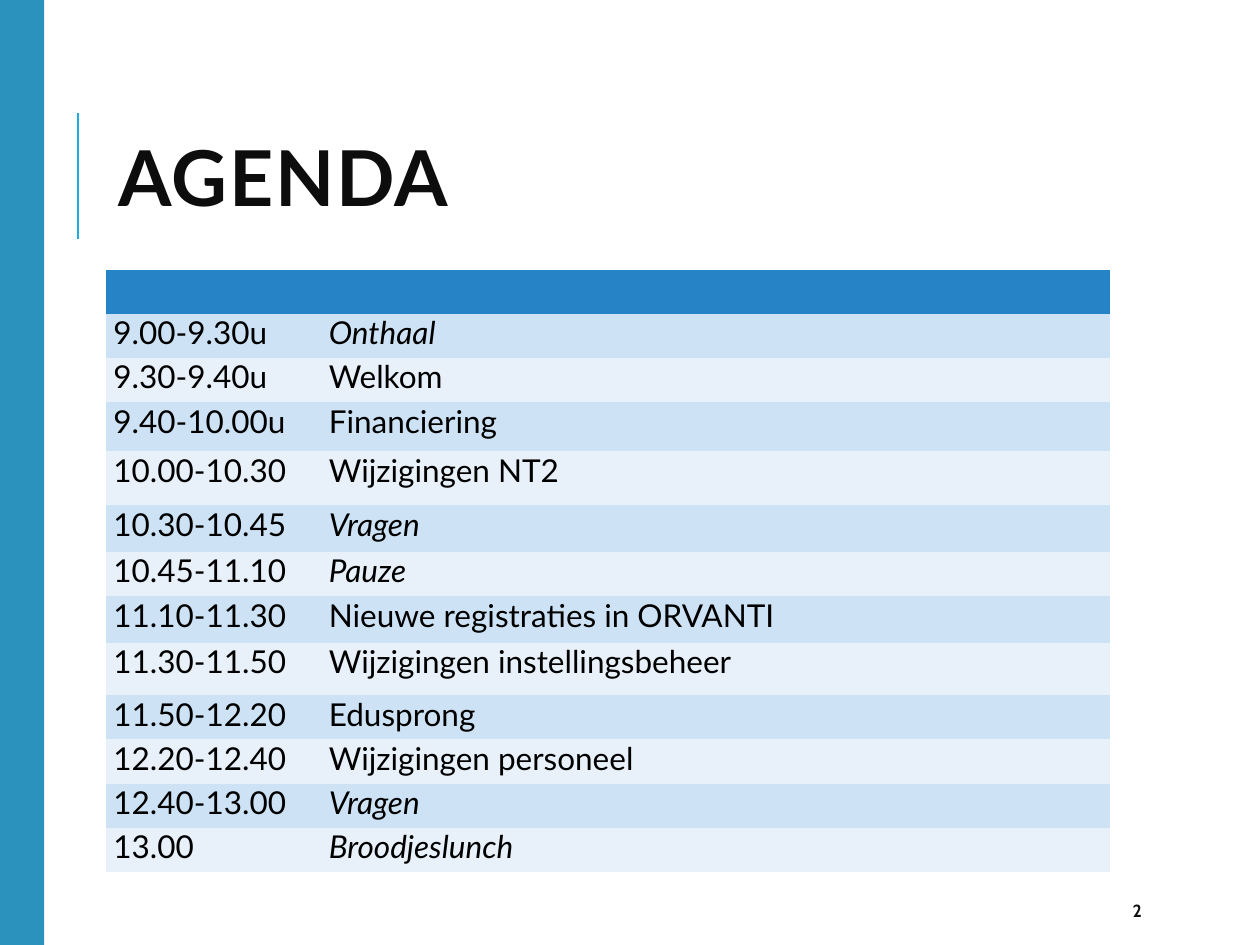
"""Build the agenda slide with its timetable."""
from pptx import Presentation
from pptx.dml.color import RGBColor
from pptx.enum.shapes import MSO_CONNECTOR as Link, MSO_SHAPE as Shape
from pptx.enum.text import MSO_ANCHOR as Anchor
from pptx.oxml.ns import qn
from pptx.util import Inches, Pt

BLACK = RGBColor(0x00, 0x00, 0x00)
INK = RGBColor(0x0D, 0x0D, 0x0D)
TEAL = RGBColor(0x2B, 0x92, 0xBE)
CYAN = RGBColor(0x1C, 0xAD, 0xE4)
HEAD = RGBColor(0x26, 0x83, 0xC6)
BANDS = RGBColor(0xCD, 0xE3, 0xF5), RGBColor(0xE8, 0xF1, 0xFA)
PLAIN = "{2D5ABB26-0587-4C30-8999-92F81FD0307C}"

AGENDA = [
    ("9.00-9.30u", "Onthaal", True),
    ("9.30-9.40u", "Welkom", False),
    ("9.40-10.00u", "Financiering", False),
    ("10.00-10.30", "Wijzigingen NT2", False),
    ("10.30-10.45", "Vragen", True),
    ("10.45-11.10", "Pauze", True),
    ("11.10-11.30", "Nieuwe registraties in ORVANTI", False),
    ("11.30-11.50", "Wijzigingen instellingsbeheer", False),
    ("11.50-12.20", "Edusprong", False),
    ("12.20-12.40", "Wijzigingen personeel", False),
    ("12.40-13.00", "Vragen", True),
    ("13.00", "Broodjeslunch", True),
]
WIDTHS = 1.71, 6.26
ROW = 0.35
TALL = {3: 0.39, 4: 0.43, 5: 0.37, 7: 0.37, 8: 0.42}


def write(frame, text, font="Lato", size=18, color=BLACK, bold=False,
          italic=False, gap=0, lead=None):
    para = frame.paragraphs[0]
    para.line_spacing = lead
    run = para.add_run()
    run.text = text
    style = run.font
    style.name, style.size = font, Pt(size)
    style.bold, style.italic = bold, italic
    style.color.rgb = color
    if gap:
        run._r.get_or_add_rPr().set("spc", str(gap * 100))


class Deck:
    def __init__(self, show):
        self.ink = INK
        self.slide = show.slides.add_slide(show.slide_layouts[6])
        self.shapes = self.slide.shapes

    def bar(self, x, y, w, h, color):
        bar = self.shapes.add_shape(
            Shape.RECTANGLE, Inches(x), Inches(y), Inches(w), Inches(h))
        bar.shadow.inherit = False
        bar.fill.solid()
        bar.fill.fore_color.rgb = color
        bar.line.fill.background()

    def line(self, x1, y1, x2, y2, color, width):
        line = self.shapes.add_connector(
            Link.STRAIGHT, Inches(x1), Inches(y1), Inches(x2), Inches(y2))
        line.line.color.rgb = color
        line.line.width = Pt(width)
        props = line._element.spPr
        props.append(props.makeelement(qn("a:effectLst"), {}))

    def text(self, x, y, w, h, words, **style):
        box = self.shapes.add_textbox(
            Inches(x), Inches(y), Inches(w), Inches(h))
        frame = box.text_frame
        frame.word_wrap = True
        frame.vertical_anchor = Anchor.MIDDLE
        write(frame, words, color=self.ink, **style)

    def cell(self, cell, color):
        cell.margin_left = cell.margin_right = Inches(0.06)
        cell.margin_top = cell.margin_bottom = 0
        cell.fill.solid()
        cell.fill.fore_color.rgb = color

    def table(self, x, y, items):
        sizes = [TALL.get(row, ROW) for row in range(len(items) + 1)]
        table = self.shapes.add_table(
            len(sizes), len(WIDTHS), Inches(x), Inches(y),
            Inches(sum(WIDTHS)), Inches(sum(sizes))).table
        table.first_row = table.horz_banding = False
        table._tbl.tblPr.find(qn("a:tableStyleId")).text = PLAIN
        for col, width in zip(table.columns, WIDTHS):
            col.width = Inches(width)
        for row, size in zip(table.rows, sizes):
            row.height = Inches(size)
        for cell in table.rows[0].cells:
            self.cell(cell, HEAD)
        for row, (time, topic, slant) in enumerate(items, 1):
            left, right = table.rows[row].cells
            for cell in (left, right):
                self.cell(cell, BANDS[(row - 1) % 2])
            write(left.text_frame, time)
            write(right.text_frame, topic, italic=slant)


def main():
    show = Presentation()
    show.slide_width, show.slide_height = Inches(10), Inches(7.5)
    deck = Deck(show)
    deck.line(0.62, 1.9, 0.62, 0.9, CYAN, 1.5)
    deck.bar(0, 0, 0.35, 7.5, TEAL)
    deck.text(0.84, 0.64, 7.97, 1.64, "AGENDA", size=44, bold=True,
              gap=1, lead=0.8)
    deck.table(0.84, 2.14, AGENDA)
    deck.text(8.89, 7.08, 0.8, 0.3, "2", font="Cabin", size=10, bold=True)
    show.save("out.pptx")


if __name__ == "__main__":
    main()
